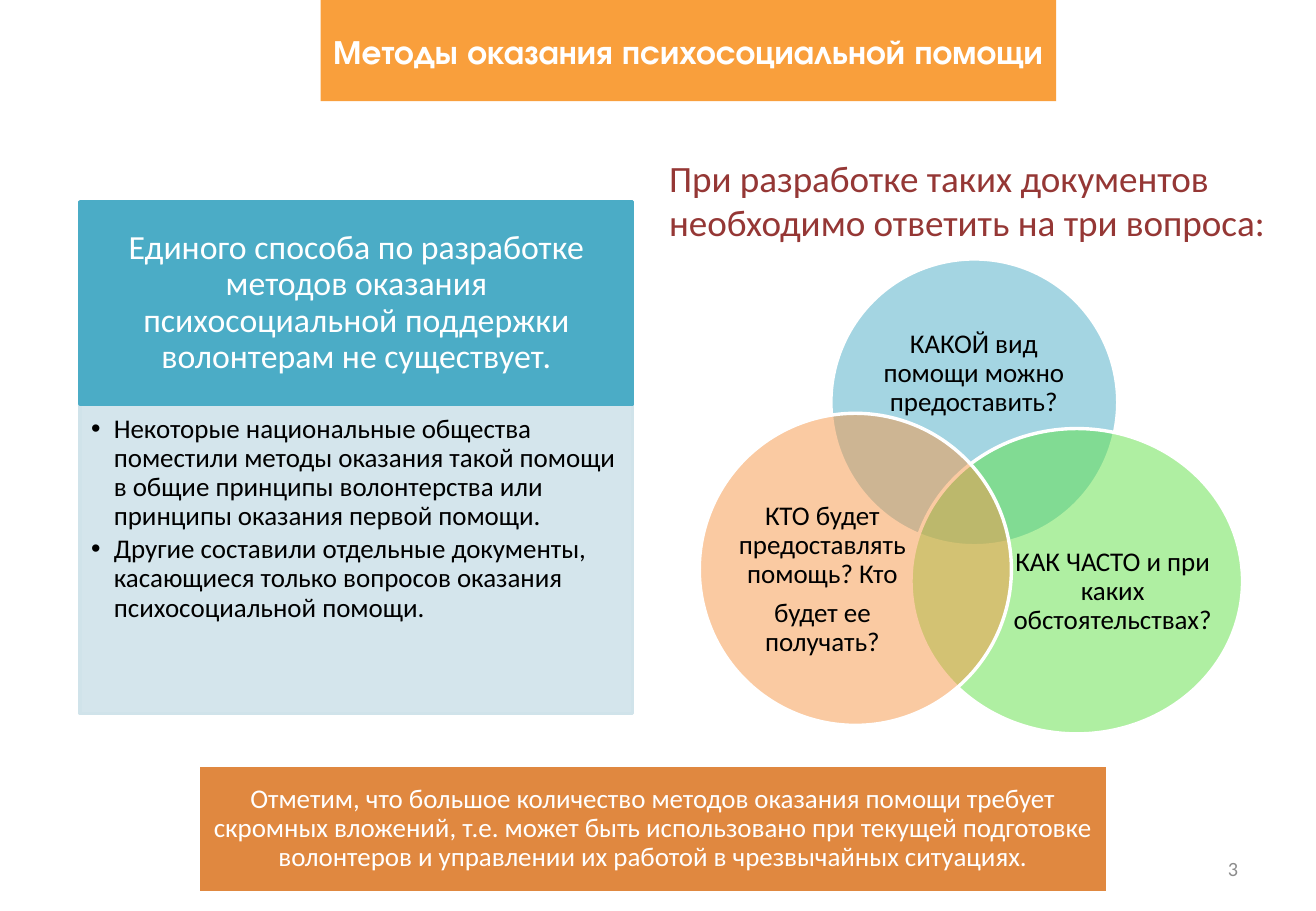
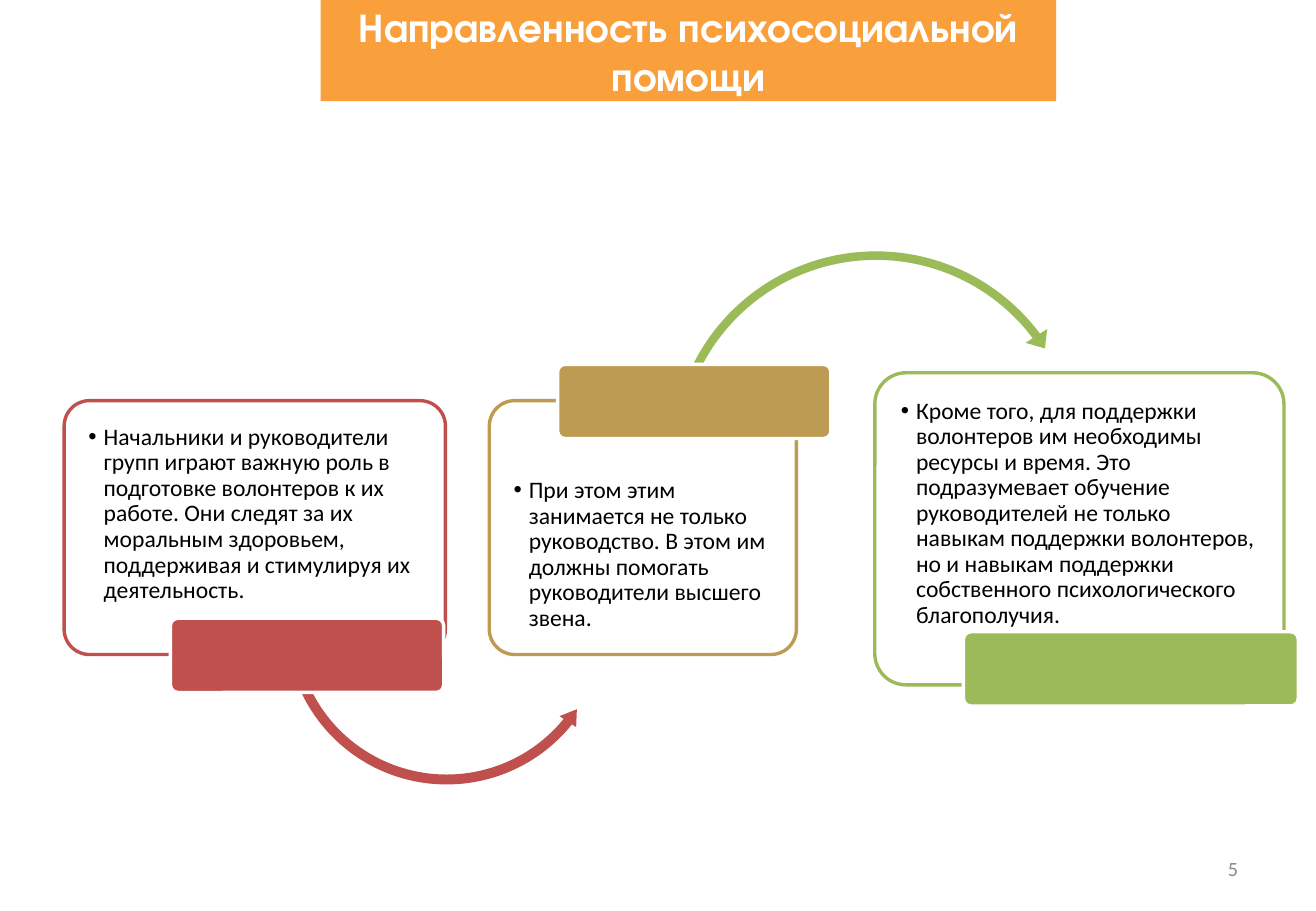
from lxml.etree import SubElement
from pptx import Presentation
from pptx.dml.color import RGBColor
from pptx.enum.shapes import MSO_SHAPE as SHAPE
from pptx.enum.text import MSO_ANCHOR as ANCHOR, MSO_AUTO_SIZE as AUTO, PP_ALIGN as ALIGN
from pptx.oxml.ns import qn
from pptx.util import Pt

WHITE = RGBColor(0xFF, 0xFF, 0xFF)
BLACK = RGBColor(0x00, 0x00, 0x00)
GRAY = RGBColor(0x8C, 0x8C, 0x8C)
BAND = RGBColor(0xF9, 0x9F, 0x3C)
TEAL = RGBColor(0x4B, 0xAC, 0xC6)
PALE_BLUE = RGBColor(0xD0, 0xE3, 0xEA)
LIGHT_GREEN = RGBColor(0x60, 0xE1, 0x46)
ORANGE = RGBColor(0xF7, 0x96, 0x46)
NOTE_ORANGE = RGBColor(0xE0, 0x88, 0x40)
DARK_RED = RGBColor(0x95, 0x37, 0x35)
RED = RGBColor(0xC0, 0x50, 0x4D)
GOLD = RGBColor(0xBD, 0x9B, 0x53)
GREEN = RGBColor(0x9B, 0xBB, 0x59)

TITLE_FONT, TEXT_FONT = "TeX Gyre Adventor", "Calibri"
LAYOUT_LIST, LAYOUT_TITLE = 1, 5
INSETS = (7.2, 3.6, 7.2, 3.6)


class Deck:
    def __init__(self, width, height):
        self.prs = Presentation()
        self.prs.slide_width, self.prs.slide_height = Pt(width), Pt(height)
        self.s = None

    def slide(self, layout, title, size, number):
        """Start a slide with the title band and the page number."""
        self.s = self.prs.slides.add_slide(self.prs.slide_layouts[layout])
        sp = self.s.shapes.title
        self.place(sp, (190, 0, 436, 60))
        self.paint(sp, BAND)
        self.set_text(sp, [title], size, WHITE, font=TITLE_FONT, bold=True, line=1, after=0)
        self.text((559, 500.5, 182, 28.8), [number], 12, GRAY, align=ALIGN.RIGHT,
                  line=1, after=0)

    def place(self, sp, box):
        sp.left, sp.top, sp.width, sp.height = map(Pt, box)

    def paint(self, sp, fill, line=None, alpha=None):
        """Fill and outline a shape; alpha is the opacity of the fill in percent."""
        sp.fill.solid()
        sp.fill.fore_color.rgb = fill
        if alpha:
            color = sp.element.spPr.find(qn("a:solidFill")).find(qn("a:srgbClr"))
            SubElement(color, qn("a:alpha")).set("val", str(alpha * 1000))
        if line is None:
            sp.line.fill.background()
        else:
            sp.line.color.rgb = line
            sp.line.width = Pt(2)

    def set_text(self, sp, texts, size, color, align=ALIGN.CENTER, anchor=ANCHOR.MIDDLE,
                 insets=INSETS, font=TEXT_FONT, bold=False, line=0.9, after=0.35, indent=0):
        """Set the paragraphs; after is a share of the size, an indent adds bullets."""
        tf = sp.text_frame
        tf.word_wrap, tf.auto_size, tf.vertical_anchor = True, AUTO.NONE, anchor
        tf.margin_left, tf.margin_top, tf.margin_right, tf.margin_bottom = map(Pt, insets)
        for i, text in enumerate(texts):
            p = tf.paragraphs[0] if i == 0 else tf.add_paragraph()
            p.text = text
            if indent:
                self.bullet(p, indent)
            p.alignment, p.line_spacing = align, line
            p.space_before, p.space_after = Pt(0), Pt(size * after)
            for r in p.runs:
                r.font.name, r.font.size, r.font.bold = font, Pt(size), bold
                r.font.color.rgb = color

    def bullet(self, p, indent):
        pPr = p._p.get_or_add_pPr()
        pPr.set("marL", str(Pt(indent)))
        pPr.set("indent", str(-Pt(indent)))
        SubElement(pPr, qn("a:buFont")).set("typeface", "Arial")
        SubElement(pPr, qn("a:buChar")).set("char", "•")

    def text(self, box, texts, size, color, **style):
        sp = self.s.shapes.add_textbox(*map(Pt, box))
        self.set_text(sp, texts, size, color, **style)

    def shape(self, kind, box, fill, line=None, alpha=None, adj=()):
        sp = self.s.shapes.add_shape(kind, *map(Pt, box))
        sp.shadow.inherit = False
        self.paint(sp, fill, line, alpha)
        for i, value in enumerate(adj):
            sp.adjustments[i] = value
        return sp

    def panel(self, box, fill, line, text, size, insets):
        sp = self.shape(SHAPE.RECTANGLE, box, fill, line)
        self.set_text(sp, [text], size, WHITE, insets=insets)

    def body(self, box, texts):
        sp = self.s.placeholders[1]
        self.place(sp, box)
        self.paint(sp, PALE_BLUE, PALE_BLUE, 90)
        self.set_text(sp, texts, 16, BLACK, ALIGN.LEFT, ANCHOR.TOP,
                      (6.5, 6.5, 8.6, 10), after=0.15, indent=13.5)

    def circle(self, box, fill, label_box, texts):
        self.shape(SHAPE.OVAL, box, fill, WHITE, 50)
        self.text(label_box, texts, 16, BLACK, insets=(0, 0, 0, 0))

    def card(self, box, color, text, top=10):
        sp = self.shape(SHAPE.ROUNDED_RECTANGLE, box, WHITE, color, 90, [0.1])
        self.set_text(sp, [text], 14, BLACK, ALIGN.LEFT, ANCHOR.TOP,
                      (10, top, 10, 10), after=0.15, indent=9)

    def tab(self, left, top, width, color):
        self.shape(SHAPE.ROUNDED_RECTANGLE, (left, top, width, 44), color, WHITE, adj=[0.1])


def methods_slide(d):
    d.slide(LAYOUT_LIST, "Методы оказания психосоциальной помощи", 20, "3")
    d.circle((492.5, 153.5, 170, 170), TEAL, (515, 183.5, 124.5, 76.5),
             ["КАКОЙ вид помощи можно предоставить?"])
    d.circle((540, 254, 196.5, 181), LIGHT_GREEN, (600.5, 301, 118, 99.5),
             ["КАК ЧАСТО и при каких обстоятельствах?"])
    d.circle((414.5, 245, 185, 185), ORANGE, (432, 293, 111, 101.5),
             ["КТО будет предоставлять помощь? Кто", "будет ее получать?"])
    d.panel((47.5, 119.5, 327.5, 120), TEAL, TEAL,
            "Единого способа по разработке методов оказания психосоциальной "
            "поддержки волонтерам не существует.", 20, (11.5, 6.5, 11.5, 6.5))
    d.body((47.5, 239.5, 327.5, 183.5), [
        "Некоторые национальные общества поместили методы оказания такой помощи "
        "в общие принципы волонтерства или принципы оказания первой помощи.",
        "Другие составили отдельные документы, касающиеся только вопросов "
        "оказания психосоциальной помощи."])
    d.text((389.5, 88.5, 390, 60.5),
           ["При разработке таких документов необходимо ответить на три вопроса:"],
           22, DARK_RED, align=ALIGN.LEFT, anchor=ANCHOR.TOP, line=1, after=0)
    d.panel((117.5, 453.5, 539, 75.5), NOTE_ORANGE, WHITE,
            "Отметим, что большое количество методов оказания помощи требует скромных "
            "вложений, т.е. может быть использовано при текущей подготовке волонтеров "
            "и управлении их работой в чрезвычайных ситуациях.", 16, (5, 5, 5, 5))


def focus_slide(d):
    d.slide(LAYOUT_TITLE, "Направленность психосоциальной помощи", 24, "5")
    d.card((38, 237.5, 226, 150.5), RED,
           "Начальники и руководители групп играют важную роль в подготовке "
           "волонтеров к их работе. Они следят за их моральным здоровьем, "
           "поддерживая и стимулируя их деятельность.")
    d.shape(SHAPE.LEFT_CIRCULAR_ARROW, (166.5, 271.5, 196.5, 196.5), RED,
            adj=[0.03, 3.38, 23.36, 92.47, 0.03])
    d.tab(101, 366.5, 162, RED)
    d.card((290, 237.5, 182, 150.5), GOLD,
           "При этом этим занимается не только руководство. В этом им должны "
           "помогать руководители высшего звена.", top=41.5)
    d.shape(SHAPE.CIRCULAR_ARROW, (393, 144, 252.5, 252.5), GREEN,
            adj=[0.02, 2.59, 193.93, 124.03, 0.03])
    d.tab(330.5, 216, 162, GOLD)
    d.card((518.5, 221, 242.5, 185), GREEN,
           "Кроме того, для поддержки волонтеров им необходимы ресурсы и время. "
           "Это подразумевает обучение руководителей не только навыкам поддержки "
           "волонтеров, но и навыкам поддержки собственного психологического "
           "благополучия.")
    d.tab(571, 374.5, 198.5, GREEN)


def main():
    d = Deck(780, 540)
    methods_slide(d)
    focus_slide(d)
    d.prs.save("out.pptx")


if __name__ == "__main__":
    main()
